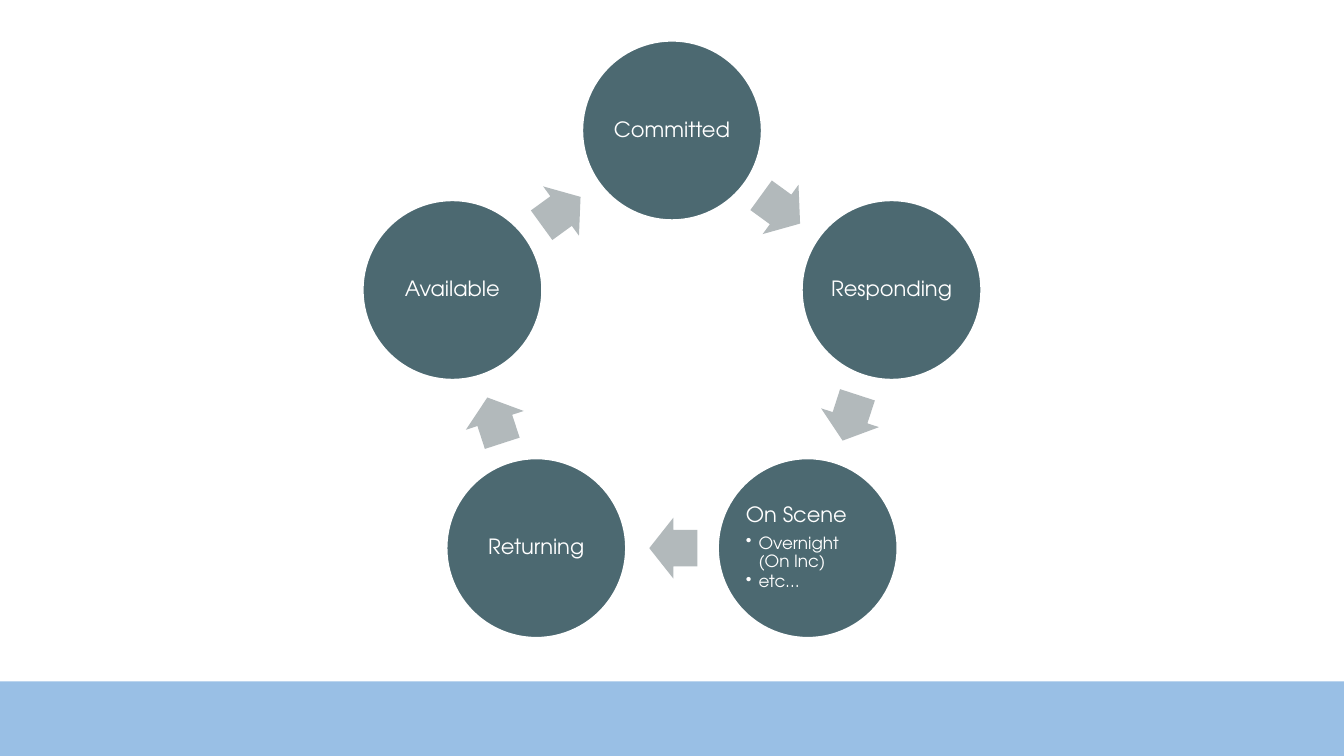
from dataclasses import dataclass
from math import cos, radians, sin

from lxml.etree import SubElement
from pptx import Presentation
from pptx.dml.color import RGBColor
from pptx.enum.shapes import MSO_SHAPE
from pptx.enum.text import MSO_ANCHOR, PP_ALIGN
from pptx.oxml.ns import qn
from pptx.util import Pt

# Content: each stage with its bullets, clockwise from the top
STAGES = [
    ("Committed", []),
    ("Responding", []),
    ("On Scene", ["Overnight (On Inc)", "etc…"]),
    ("Returning", []),
    ("Available", []),
]


@dataclass(frozen=True)
class Theme:
    font: str = "TeX Gyre Adventor"
    head: float = 15
    sub: float = 12
    band: str = "99BFE5"
    disc: str = "4C6971"
    arrow: str = "B2B9BB"
    white: str = "FFFFFF"


THEME = Theme()

# Layout in points
WIDE, HIGH = 960, 540
BAND = 53.3
MID_X, MID_Y, RADIUS = 480, 258.1, 164.9
DISC = 128.9
ARROW_W, ARROW_H, BACK = 34.4, 43.5, 1
INDENT = 9
STEP = 360 / len(STAGES)


def add_part(slide, kind, x, y, w, h, fill):
    """Add a plain filled shape centred on x, y."""
    part = slide.shapes.add_shape(kind, Pt(x - w / 2), Pt(y - h / 2), Pt(w), Pt(h))
    part.shadow.inherit = False
    part.fill.solid()
    part.fill.fore_color.rgb = RGBColor.from_string(fill)
    part.line.fill.background()
    return part


def add_text(frame, text, size, after, align=PP_ALIGN.LEFT, bullet=False):
    """Write one paragraph, using the empty first one if there is one."""
    para = frame.paragraphs[0]
    if para.runs:
        para = frame.add_paragraph()
    if bullet:
        para.level = 1
        props = para._p.get_or_add_pPr()
        props.set("marL", str(Pt(INDENT)))
        props.set("indent", str(-Pt(INDENT)))
        SubElement(props, qn("a:buChar"), char="•")
    para.alignment = align
    para.line_spacing = 0.9
    para.space_after = Pt(after)
    run = para.add_run()
    run.text = text
    run.font.name = THEME.font
    run.font.size = Pt(size)
    run.font.color.rgb = RGBColor.from_string(THEME.white)


def spot(angle, reach):
    """Point at a clockwise angle from the top of the ring."""
    turn = radians(angle)
    return MID_X + reach * sin(turn), MID_Y - reach * cos(turn)


def add_disc(slide, angle, title, notes):
    x, y = spot(angle, RADIUS)
    disc = add_part(slide, MSO_SHAPE.OVAL, x, y, DISC, DISC, THEME.disc)
    disc.line.color.rgb = RGBColor.from_string(THEME.white)
    disc.line.width = Pt(2)
    frame = disc.text_frame
    frame.word_wrap = True
    frame.vertical_anchor = MSO_ANCHOR.MIDDLE
    frame.margin_left = frame.margin_right = Pt(1.5)
    frame.margin_top = frame.margin_bottom = Pt(1.5)
    align = PP_ALIGN.LEFT if notes else PP_ALIGN.CENTER
    add_text(frame, title, THEME.head, 0.35 * THEME.head, align=align)
    for note in notes:
        add_text(frame, note, THEME.sub, 0.15 * THEME.sub, bullet=True)


def add_arrow(slide, angle):
    # Halfway along the chord between two discs, set slightly back
    x, y = spot(angle, RADIUS * cos(radians(STEP / 2)))
    x -= BACK * cos(radians(angle))
    y -= BACK * sin(radians(angle))
    arrow = add_part(slide, MSO_SHAPE.RIGHT_ARROW, x, y, ARROW_W, ARROW_H, THEME.arrow)
    arrow.adjustments[0] = 0.6
    arrow.adjustments[1] = 0.5
    arrow.rotation = angle


def main():
    deck = Presentation()
    deck.slide_width, deck.slide_height = Pt(WIDE), Pt(HIGH)
    slide = deck.slides.add_slide(deck.slide_layouts[6])

    # Bottom band
    add_part(slide, MSO_SHAPE.RECTANGLE, WIDE / 2, HIGH - BAND / 2, WIDE, BAND, THEME.band)

    # Ring of stages and the arrows between them
    for i, (title, notes) in enumerate(STAGES):
        add_disc(slide, i * STEP, title, notes)
        add_arrow(slide, (i + 0.5) * STEP)

    deck.save("out.pptx")


if __name__ == "__main__":
    main()
